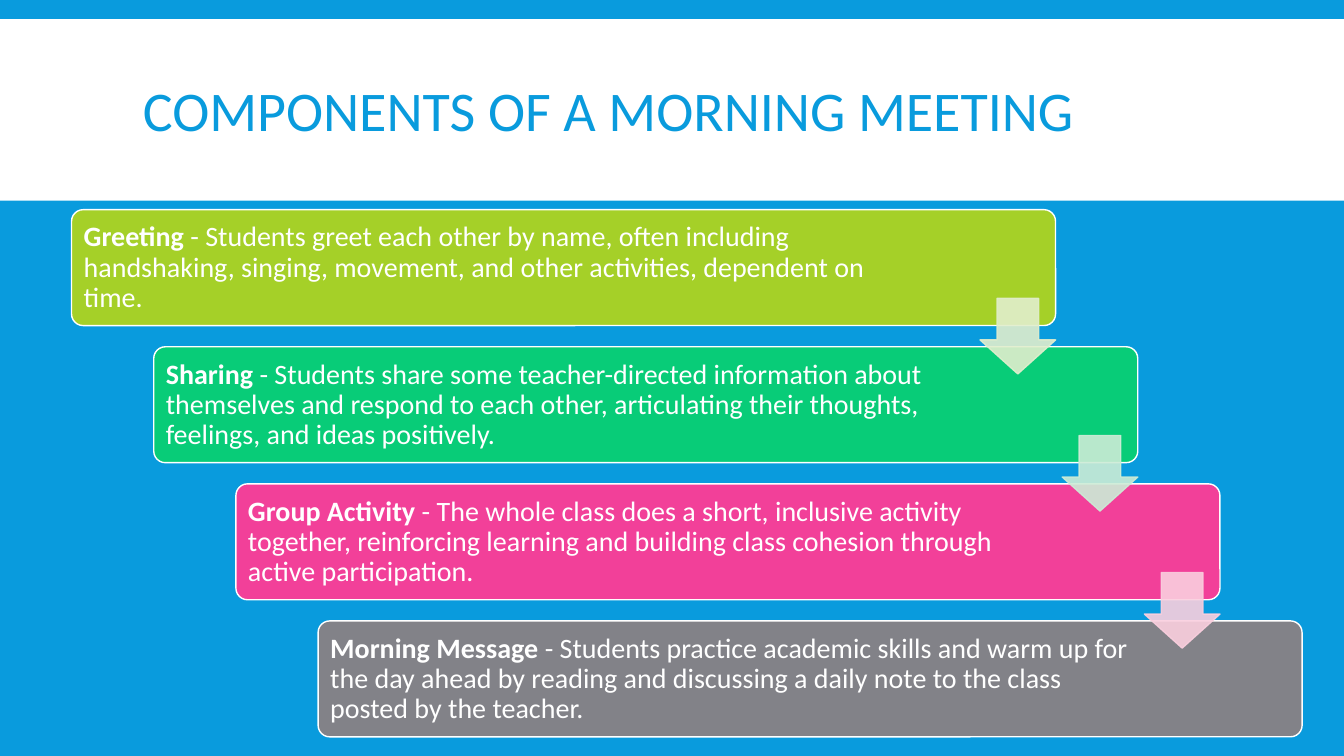
"""Build the slide on the components of a morning meeting."""
from lxml import etree
from pptx import Presentation
from pptx.dml.color import RGBColor
from pptx.enum.shapes import MSO_SHAPE
from pptx.enum.text import MSO_ANCHOR, PP_ALIGN
from pptx.oxml.ns import qn
from pptx.util import Inches, Pt

RECTANGLE = MSO_SHAPE.RECTANGLE
ROUNDED = MSO_SHAPE.ROUNDED_RECTANGLE
DOWN_ARROW = MSO_SHAPE.DOWN_ARROW
MIDDLE = MSO_ANCHOR.MIDDLE
LEFT = PP_ALIGN.LEFT

WHITE = RGBColor(0xFF, 0xFF, 0xFF)
BLUE = RGBColor(0x09, 0x9B, 0xDD)
LIME = RGBColor(0xA5, 0xD0, 0x28)
GREEN = RGBColor(0x08, 0xCC, 0x78)
PINK = RGBColor(0xF2, 0x40, 0x99)
GRAY = RGBColor(0x82, 0x82, 0x88)
PALE_LIME = RGBColor(0xE1, 0xEE, 0xCD)
PALE_GREEN = RGBColor(0xCC, 0xEC, 0xD6)
PALE_PINK = RGBColor(0xFA, 0xCF, 0xDE)

FONT = "Calibri"
BOX_LEFT, BOX_TOP, BOX_WIDTH, BOX_HEIGHT = 0.71, 2.08, 9.76, 1.15
STEP_X, STEP_Y = 0.815, 1.36
ARROW_SIZE, ARROW_DROP = 0.75, 0.88

COMPONENTS = [
    ("Greeting", " - Students greet each other by name, often including handshaking, "
     "singing, movement, and other activities, dependent on time.", LIME, 8.42),
    ("Sharing", " - Students share some teacher-directed information about themselves "
     "and respond to each other, articulating their thoughts, feelings, and ideas "
     "positively.", GREEN, 8.12),
    ("Group Activity", " - The whole class does a short, inclusive activity together, "
     "reinforcing learning and building class cohesion through active participation.",
     PINK, 8.13),
    ("Morning Message", " - Students practice academic skills and warm up for the day "
     "ahead by reading and discussing a daily note to the class posted by the teacher.",
     GRAY, 8.12),
]


def add_filled(kind, left, top, width, height, fill, line=None):
    shape = page.shapes.add_shape(kind, Inches(left), Inches(top), Inches(width), Inches(height))
    shape.shadow.inherit = False
    shape.fill.solid()
    shape.fill.fore_color.rgb = fill
    if line is None:
        shape.line.fill.background()
    else:
        shape.line.color.rgb = line
        shape.line.width = Pt(1)
    return shape


def add_text(left, top, width, height, spans, size, color, spacing):
    box = page.shapes.add_textbox(Inches(left), Inches(top), Inches(width), Inches(height))
    frame = box.text_frame
    frame.word_wrap = True
    frame.vertical_anchor = MIDDLE
    para = frame.paragraphs[0]
    para.alignment = LEFT
    para.line_spacing = spacing
    for text, bold in spans:
        span = para.add_run()
        span.text = text
        span.font.name = FONT
        span.font.size = Pt(size)
        span.font.bold = bold
        span.font.color.rgb = color
    return frame


deck = Presentation()
deck.slide_width = Inches(13.33)
deck.slide_height = Inches(7.5)
page = deck.slides.add_slide(deck.slide_layouts[6])
page.background.fill.solid()
page.background.fill.fore_color.rgb = BLUE

add_filled(RECTANGLE, 0, 0.19, 13.33, 1.8, WHITE)
add_text(1.32, 0.31, 10.7, 1.65, [("COMPONENTS OF A MORNING MEETING", False)], 40, BLUE, 0.85)

for index, (name, description, color, text_width) in enumerate(COMPONENTS):
    left = BOX_LEFT + index * STEP_X
    top = BOX_TOP + index * STEP_Y
    card = add_filled(ROUNDED, left, top, BOX_WIDTH, BOX_HEIGHT, color, WHITE)
    card.adjustments[0] = 0.1
    frame = add_text(left + 0.04, top + 0.04, text_width, 1.08,
                     [(name, True), (description, False)], 20, WHITE, 0.9)
    frame.margin_left = frame.margin_right = Inches(0.08)
    frame.margin_top = frame.margin_bottom = Inches(0.08)

for index, color in enumerate([PALE_LIME, PALE_GREEN, PALE_PINK]):
    left = BOX_LEFT + BOX_WIDTH - ARROW_SIZE + index * STEP_X
    top = BOX_TOP + ARROW_DROP + index * STEP_Y
    arrow = add_filled(DOWN_ARROW, left, top, ARROW_SIZE, ARROW_SIZE, color, color)
    arrow.adjustments[0] = 0.55
    arrow.adjustments[1] = 0.45
    for tint in arrow.element.spPr.iter(qn("a:srgbClr")):
        etree.SubElement(tint, qn("a:alpha"), val="90000")

deck.save("out.pptx")
